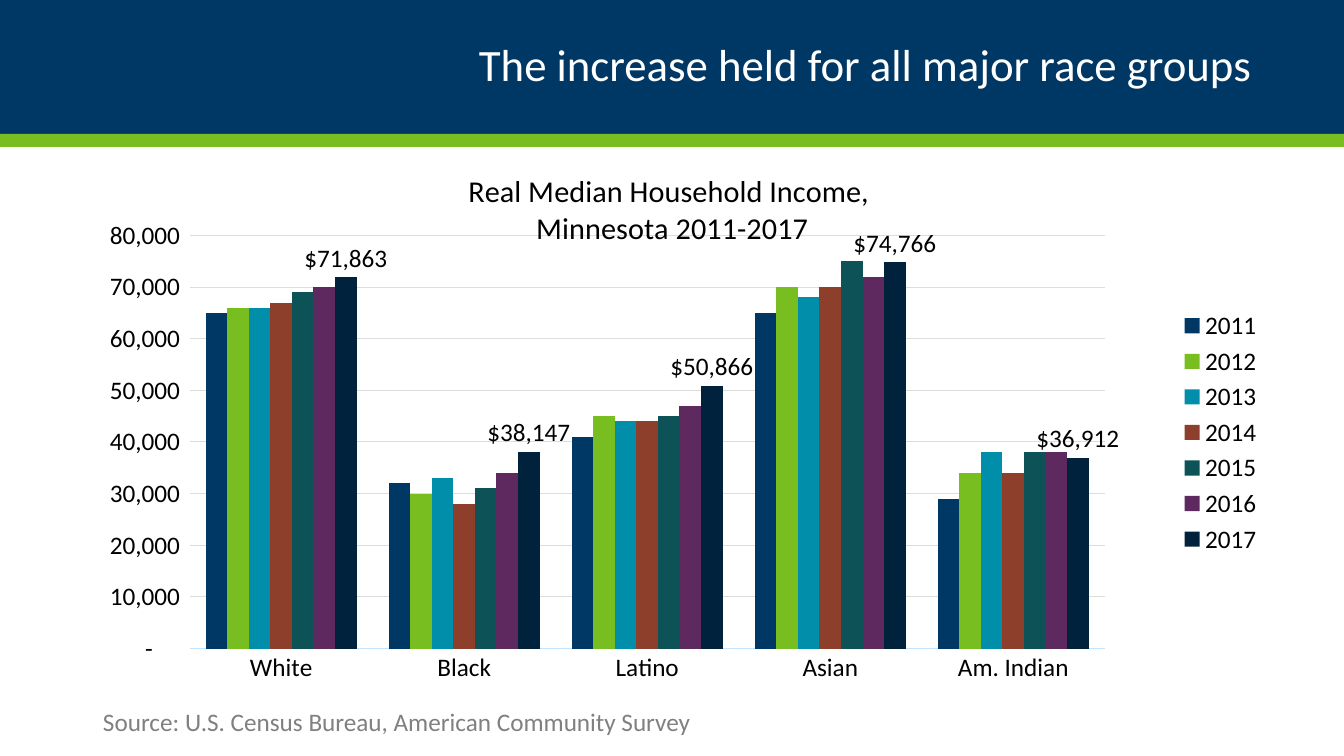
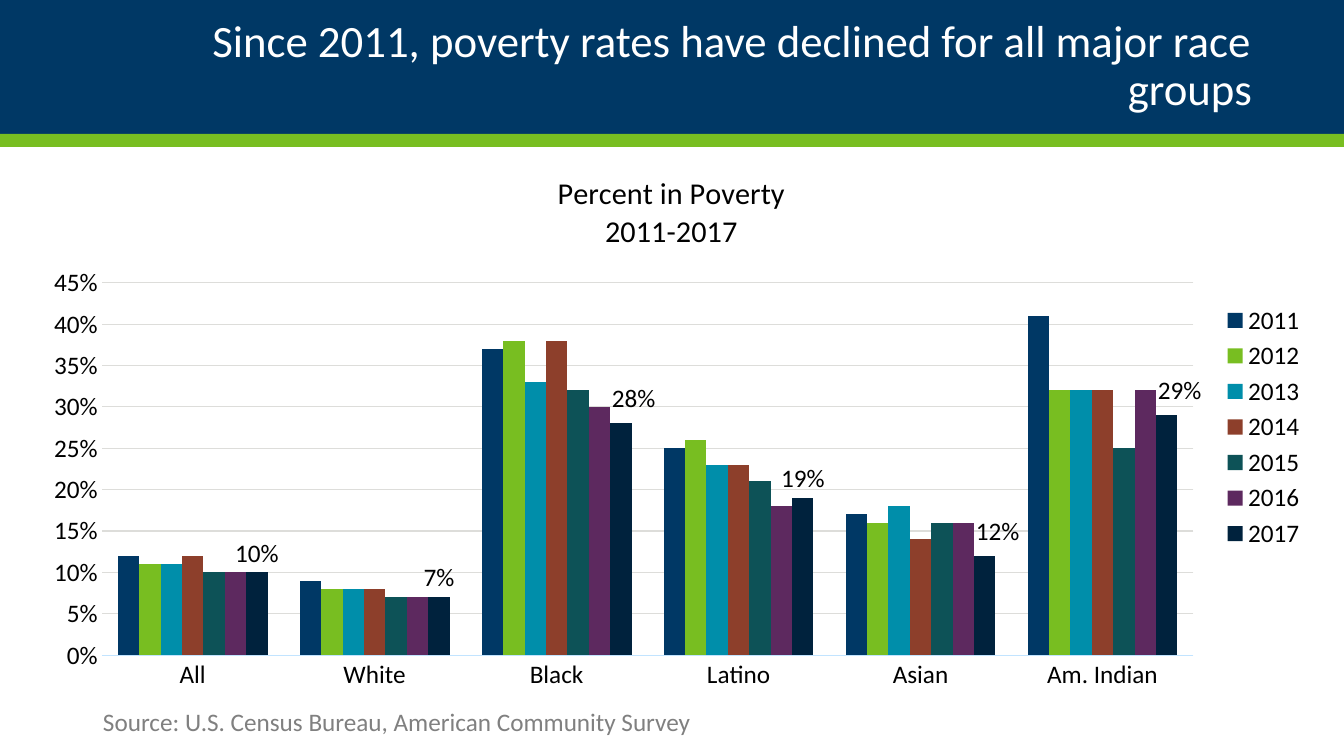
from dataclasses import dataclass, field

from lxml import etree
from pptx import Presentation
from pptx.chart.data import CategoryChartData
from pptx.dml.color import RGBColor
from pptx.enum.chart import XL_CHART_TYPE, XL_LABEL_POSITION, XL_LEGEND_POSITION, XL_TICK_MARK
from pptx.enum.shapes import MSO_SHAPE
from pptx.enum.text import MSO_ANCHOR, PP_ALIGN
from pptx.oxml.ns import qn
from pptx.util import Emu, Pt

CLUSTERED = XL_CHART_TYPE.COLUMN_CLUSTERED
OUTSIDE_END = XL_LABEL_POSITION.OUTSIDE_END
LEGEND_RIGHT = XL_LEGEND_POSITION.RIGHT
NO_TICKS = XL_TICK_MARK.NONE
RECTANGLE = MSO_SHAPE.RECTANGLE
TOP, MIDDLE = MSO_ANCHOR.TOP, MSO_ANCHOR.MIDDLE
LEFT, RIGHT = PP_ALIGN.LEFT, PP_ALIGN.RIGHT

SLIDE_W, SLIDE_H = 1344, 756
EMU_PER_PX = 12192000 / SLIDE_W
FONT = "Calibri"
NAVY, GREEN, WHITE, BLACK, GRAY = "003865", "78BE21", "FFFFFF", "000000", "808080"
AXIS_BLUE, GRID_GRAY = "C2E4FF", "DDDDDA"
YEAR_COLORS = {
    "2011": NAVY,
    "2012": GREEN,
    "2013": "008EAA",
    "2014": "8D3F2B",
    "2015": "0D5257",
    "2016": "5D295F",
    "2017": "00223D",
}
SOURCE = "Source: U.S. Census Bureau, American Community Survey"


@dataclass(frozen=True)
class Box:
    left: int
    top: int
    width: int
    height: int

    def emu(self) -> list[Emu]:
        return [px(n) for n in (self.left, self.top, self.width, self.height)]


@dataclass(frozen=True)
class ChartSlide:
    """Plot is left, top, width, height as shares of the chart; label_shifts go by point."""
    headline: str
    chart_title: tuple[str, ...]
    area: Box
    plot: tuple[float, float, float, float]
    axis_max: float
    axis_step: float
    axis_format: str
    label_format: str
    by_group: dict[str, tuple[float, ...]]
    label_shifts: dict[int, tuple[float, float]] = field(default_factory=dict)


HEADER = Box(0, 0, SLIDE_W, 134)
STRIPE = Box(0, 134, SLIDE_W, 13)
HEADLINE = Box(93, 0, 1159, 134)
SOURCE_LINE = Box(93, 701, 899, 40)

SLIDES = (
    ChartSlide(
        headline="The increase held for all major race groups",
        chart_title=("Real Median Household Income, ", "Minnesota 2011-2017"),
        area=Box(72, 151, 1201, 563),
        plot=(0.098, 0.15, 0.762, 0.734),
        axis_max=80000,
        axis_step=10000,
        axis_format='_(* #,##0_);_(* \\(#,##0\\);_(* "-"??_);_(@_)',
        label_format='"$"#,##0',
        by_group={
            "White": (65000, 66000, 66000, 67000, 69000, 70000, 71863),
            "Black": (32000, 30000, 33000, 28000, 31000, 34000, 38147),
            "Latino": (41000, 45000, 44000, 44000, 45000, 47000, 50866),
            "Asian": (65000, 70000, 68000, 70000, 75000, 72000, 74766),
            "Am. Indian": (29000, 34000, 38000, 34000, 38000, 38000, 36912),
        },
    ),
    ChartSlide(
        headline="Since 2011, poverty rates have declined for all major race groups",
        chart_title=("Percent in Poverty", "2011-2017"),
        area=Box(27, 154, 1289, 546),
        plot=(0.058, 0.236, 0.847, 0.682),
        axis_max=0.45,
        axis_step=0.05,
        axis_format="0%",
        label_format="0%",
        by_group={
            "All": (0.12, 0.11, 0.11, 0.12, 0.10, 0.10, 0.10),
            "White": (0.09, 0.08, 0.08, 0.08, 0.07, 0.07, 0.07),
            "Black": (0.37, 0.38, 0.33, 0.38, 0.32, 0.30, 0.28),
            "Latino": (0.25, 0.26, 0.23, 0.23, 0.21, 0.18, 0.19),
            "Asian": (0.17, 0.16, 0.18, 0.14, 0.16, 0.16, 0.12),
            "Am. Indian": (0.41, 0.32, 0.32, 0.32, 0.25, 0.32, 0.29),
        },
        label_shifts={2: (0.01, -0.01), 4: (0.01, -0.01), 5: (0.01, -0.01)},
    ),
)


def px(length: int) -> Emu:
    return Emu(round(length * EMU_PER_PX))


def rgb(color: str) -> RGBColor:
    return RGBColor.from_string(color)


def style_font(font, size: float = 18, color: str = BLACK) -> None:
    font.name = FONT
    font.size = Pt(size)
    font.bold = False
    font.color.rgb = rgb(color)


def add_band(slide, box: Box, color: str) -> None:
    band = slide.shapes.add_shape(RECTANGLE, *box.emu())
    band.shadow.inherit = False
    band.fill.solid()
    band.fill.fore_color.rgb = rgb(color)
    band.line.fill.background()


def add_text(slide, box: Box, text: str, *, size: float, color: str, align=LEFT,
             anchor=TOP, side_inset: int = 10, line_spacing: float = 1.0) -> None:
    frame = slide.shapes.add_textbox(*box.emu()).text_frame
    frame.word_wrap = True
    frame.vertical_anchor = anchor
    frame.margin_left = frame.margin_right = px(side_inset)
    paragraph = frame.paragraphs[0]
    paragraph.alignment = align
    paragraph.line_spacing = line_spacing
    run = paragraph.add_run()
    run.text = text
    style_font(run.font, size, color)


def manual_layout(**settings):
    layout = etree.Element(qn("c:layout"))
    manual = etree.SubElement(layout, qn("c:manualLayout"))
    for name, value in settings.items():
        etree.SubElement(manual, qn(f"c:{name}")).set("val", str(value))
    return layout


def place_plot(chart, plot: tuple[float, float, float, float]) -> None:
    plot_area = chart.element.find(".//" + qn("c:plotArea"))
    for automatic in plot_area.findall(qn("c:layout")):
        plot_area.remove(automatic)
    left, top, width, height = plot
    plot_area.insert(0, manual_layout(layoutTarget="inner", xMode="edge", yMode="edge",
                                      x=left, y=top, w=width, h=height))


def style_axes(chart, content: ChartSlide) -> None:
    groups, amounts = chart.category_axis, chart.value_axis
    for axis in (groups, amounts):
        axis.major_tick_mark = axis.minor_tick_mark = NO_TICKS
        style_font(axis.tick_labels.font)
    groups.format.line.color.rgb = rgb(AXIS_BLUE)
    groups.format.line.width = Pt(0.75)
    amounts.minimum_scale, amounts.maximum_scale = 0, content.axis_max
    amounts.major_unit = content.axis_step
    amounts.format.line.fill.background()
    amounts.major_gridlines.format.line.color.rgb = rgb(GRID_GRAY)
    amounts.major_gridlines.format.line.width = Pt(0.75)
    amounts.tick_labels.number_format = content.axis_format
    amounts.tick_labels.number_format_is_linked = False


def label_latest_year(series, content: ChartSlide) -> None:
    labels = series.data_labels
    labels.show_value = True
    labels.position = OUTSIDE_END
    labels.number_format = content.label_format
    labels.number_format_is_linked = False
    style_font(labels.font)
    for index, (x, y) in content.label_shifts.items():
        label = series.points[index].data_label
        style_font(label.font)
        label.position = OUTSIDE_END
        point = next(item for item in series.data_labels._element.findall(qn("c:dLbl"))
                     if item.find(qn("c:idx")).get("val") == str(index))
        number_format = etree.Element(qn("c:numFmt"), formatCode=content.label_format,
                                      sourceLinked="0")
        point.insert(1, manual_layout(x=x, y=y))
        point.insert(2, number_format)


def add_chart_title(chart, lines: tuple[str, ...]) -> None:
    frame = chart.chart_title.text_frame
    for index, line in enumerate(lines):
        paragraph = frame.add_paragraph() if index else frame.paragraphs[0]
        run = paragraph.add_run()
        run.text = line
        style_font(run.font, 21.6)


def add_year_chart(slide, content: ChartSlide) -> None:
    data = CategoryChartData()
    data.categories = list(content.by_group)
    for year, values in zip(YEAR_COLORS, zip(*content.by_group.values())):
        data.add_series(year, values)
    chart = slide.shapes.add_chart(CLUSTERED, *content.area.emu(), data).chart
    style_font(chart.font)
    add_chart_title(chart, content.chart_title)
    chart.has_legend = True
    chart.legend.position = LEGEND_RIGHT
    chart.legend.include_in_layout = False
    style_font(chart.legend.font)
    style_axes(chart, content)
    columns = chart.plots[0]
    columns.gap_width, columns.overlap = 150, 0
    columns.vary_by_categories = False
    for series in columns.series:
        series.format.fill.solid()
        series.format.fill.fore_color.rgb = rgb(YEAR_COLORS[series.name])
    label_latest_year(columns.series[-1], content)
    place_plot(chart, content.plot)


def add_slide(deck, content: ChartSlide) -> None:
    slide = deck.slides.add_slide(deck.slide_layouts[6])
    add_band(slide, HEADER, NAVY)
    add_band(slide, STRIPE, GREEN)
    add_text(slide, HEADLINE, content.headline, size=32, color=WHITE, align=RIGHT,
             anchor=MIDDLE, side_inset=0, line_spacing=0.9)
    add_year_chart(slide, content)
    add_text(slide, SOURCE_LINE, SOURCE, size=18, color=GRAY)


def main() -> None:
    deck = Presentation()
    deck.slide_width, deck.slide_height = px(SLIDE_W), px(SLIDE_H)
    for content in SLIDES:
        add_slide(deck, content)
    deck.save("out.pptx")


if __name__ == "__main__":
    main()
